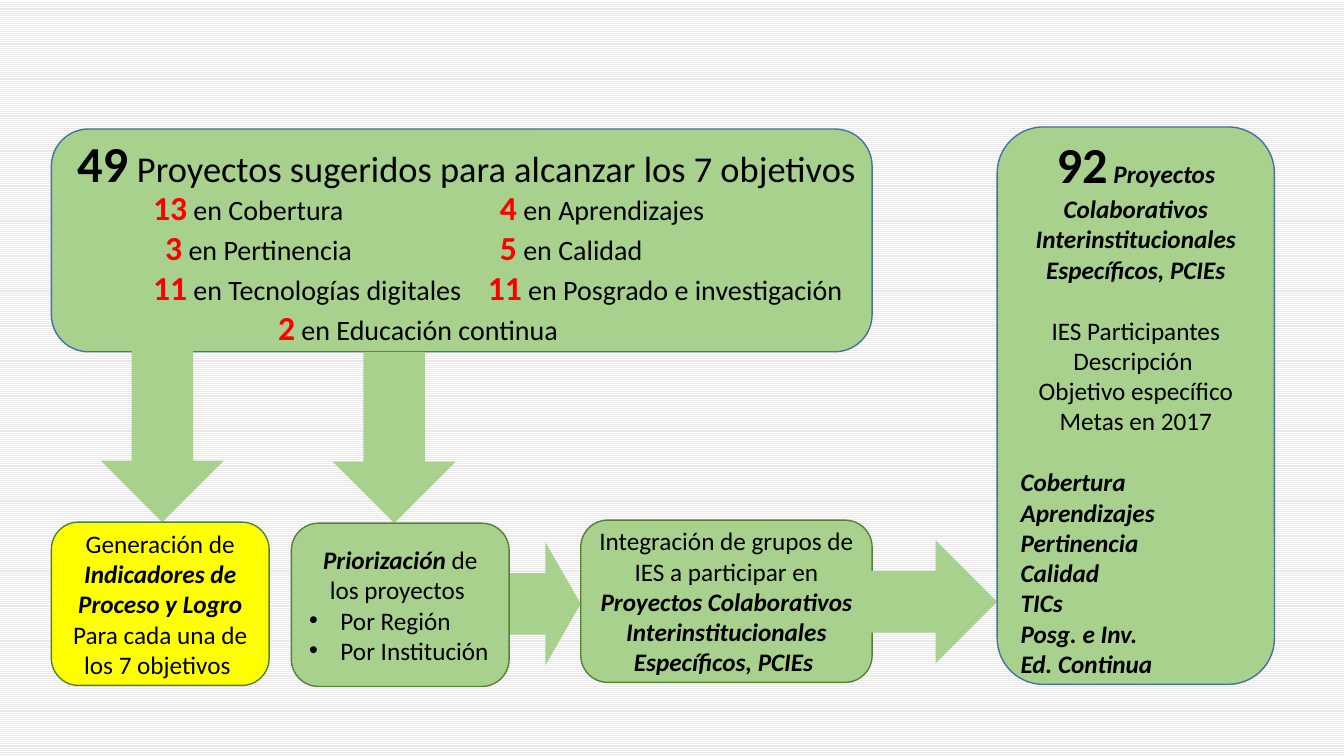
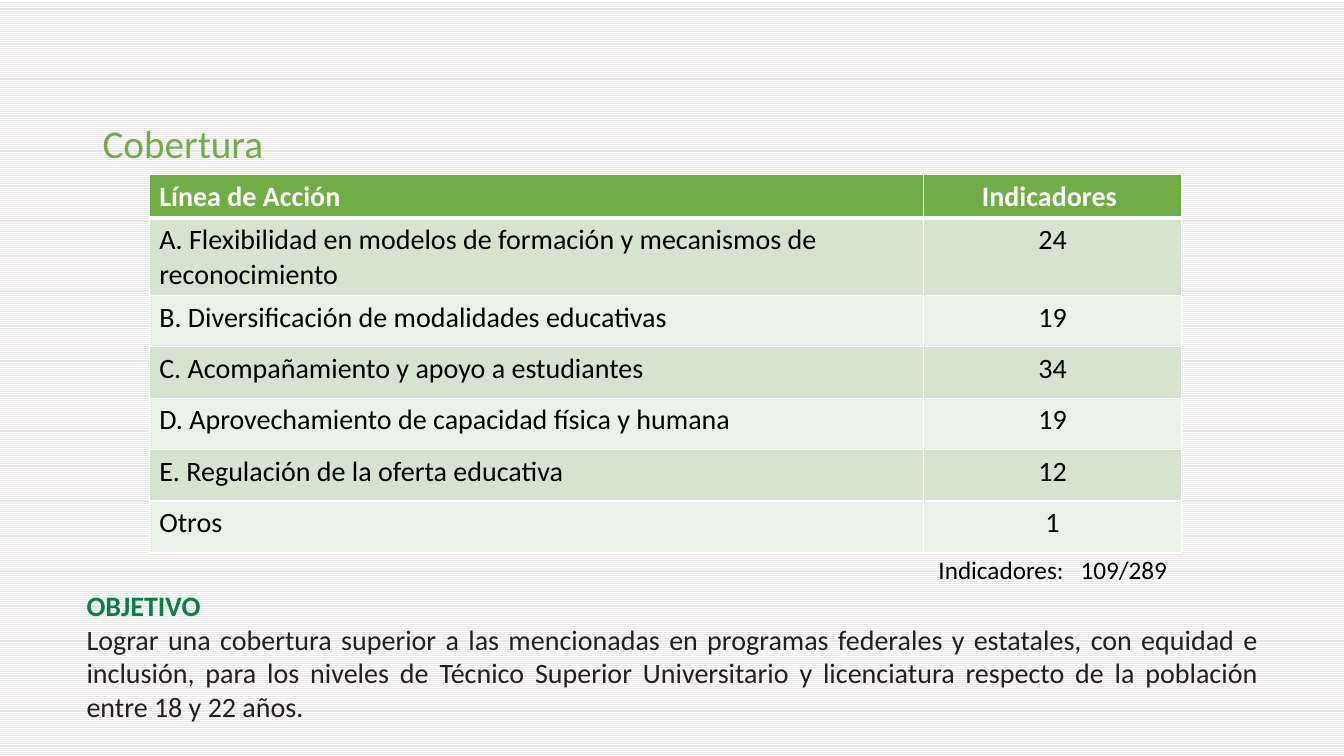
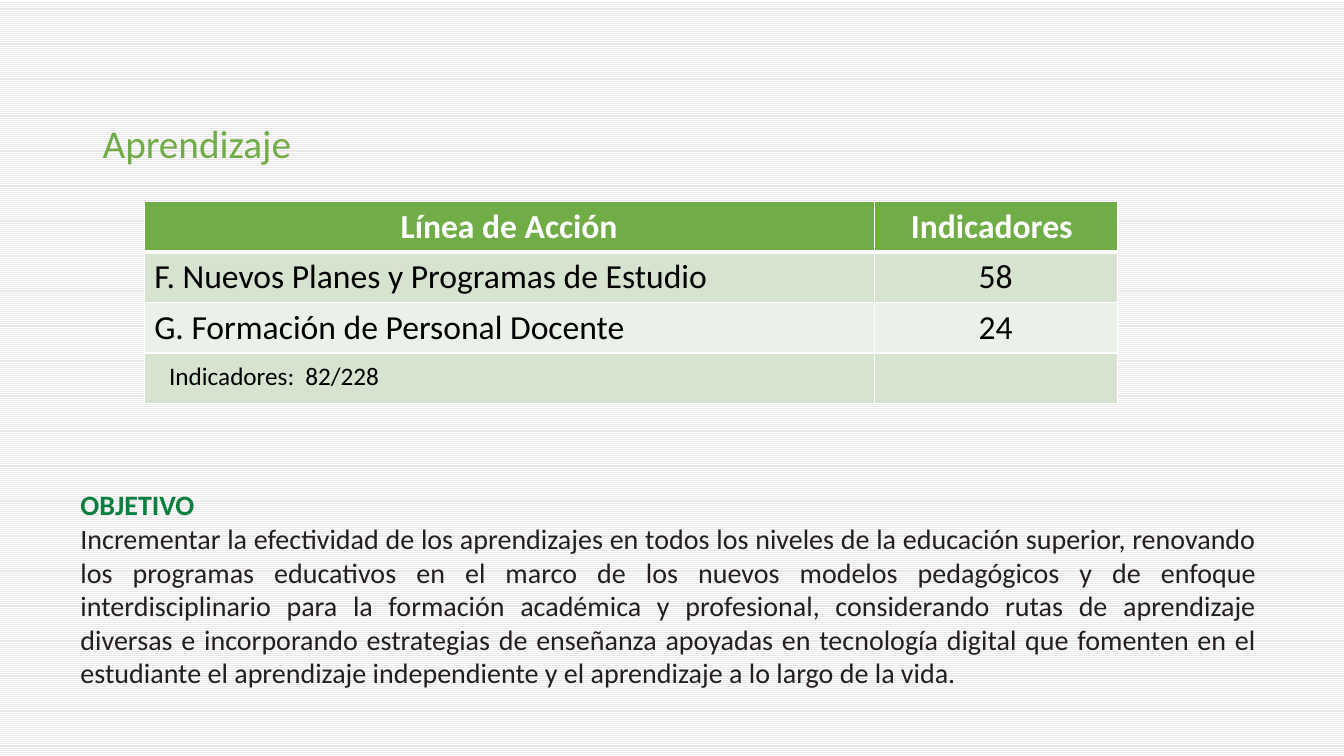
from dataclasses import dataclass

from lxml import etree
from pptx import Presentation
from pptx.dml.color import RGBColor
from pptx.enum.dml import MSO_PATTERN
from pptx.enum.shapes import MSO_SHAPE
from pptx.enum.text import MSO_ANCHOR, PP_ALIGN
from pptx.oxml.ns import qn
from pptx.util import Inches, Pt

LEFT, CENTER, JUSTIFY = PP_ALIGN.LEFT, PP_ALIGN.CENTER, PP_ALIGN.JUSTIFY
TOP, MIDDLE = MSO_ANCHOR.TOP, MSO_ANCHOR.MIDDLE
ROUNDED, DOWN_ARROW, RIGHT_ARROW = (
    MSO_SHAPE.ROUNDED_RECTANGLE, MSO_SHAPE.DOWN_ARROW, MSO_SHAPE.RIGHT_ARROW)
LIGHT_HORIZONTAL = MSO_PATTERN.LIGHT_HORIZONTAL

FONT = "Calibri"
COLORS = {
    "stripe": "E9E7E7", "white": "FFFFFF", "black": "000000", "red": "FF0000",
    "card": "A9D18E", "highlight": "FFFF00", "blue_line": "43739E",
    "green_line": "548235", "accent": "70AD47", "band_dark": "D5E3CF",
    "band_light": "EBF1E9", "heading": "097F40", "body": "231F20",
}


@dataclass
class Run:
    text: str
    size: float = 18
    color: str = "black"
    bold: bool = False
    italic: bool = False


@dataclass
class Line:
    runs: list
    align: PP_ALIGN = LEFT
    before: float = 0
    spacing: float = 1.0
    tabs: tuple = ()
    bullet: bool = False


def rgb(name):
    return RGBColor.from_string(COLORS[name])


def add_bullet(properties):
    properties.set("marL", str(Inches(0.31)))
    properties.set("indent", str(Inches(-0.31)))
    etree.SubElement(properties, qn("a:buFont")).set("typeface", "Arial")
    etree.SubElement(properties, qn("a:buChar")).set("char", "•")


def add_tabs(properties, positions):
    tab_list = etree.SubElement(properties, qn("a:tabLst"))
    for position in positions:
        tab = etree.SubElement(tab_list, qn("a:tab"))
        tab.set("pos", str(Inches(position)))
        tab.set("algn", "l")


def write_text(frame, lines, anchor=TOP):
    frame.word_wrap = True
    frame.vertical_anchor = anchor
    for index, line in enumerate(lines):
        paragraph = frame.add_paragraph() if index else frame.paragraphs[0]
        properties = paragraph._p.get_or_add_pPr()
        if line.bullet:
            add_bullet(properties)
        if line.tabs:
            add_tabs(properties, line.tabs)
        paragraph.alignment = line.align
        paragraph.line_spacing = line.spacing
        if line.before:
            paragraph.space_before = Pt(line.before)
        for part in line.runs:
            run = paragraph.add_run()
            run.text = part.text
            run.font.name = FONT
            run.font.size = Pt(part.size)
            run.font.bold = part.bold
            run.font.italic = part.italic
            run.font.color.rgb = rgb(part.color)


def add_text(slide, box, lines, anchor=TOP):
    shape = slide.shapes.add_textbox(*map(Inches, box))
    write_text(shape.text_frame, lines, anchor)


def add_block(slide, kind, box, fill="card", line=None, lines=()):
    shape = slide.shapes.add_shape(kind, *map(Inches, box))
    shape.shadow.inherit = False
    shape.fill.solid()
    shape.fill.fore_color.rgb = rgb(fill)
    if line:
        shape.line.color.rgb = rgb(line)
        shape.line.width = Pt(1)
    else:
        shape.line.fill.background()
    write_text(shape.text_frame, lines, MIDDLE)


def add_slide(presentation):
    slide = presentation.slides.add_slide(presentation.slide_layouts[6])
    fill = slide.background.fill
    fill.patterned()
    fill.pattern = LIGHT_HORIZONTAL
    fill.fore_color.rgb = rgb("stripe")
    fill.back_color.rgb = rgb("white")
    return slide


def add_projects_card(slide, box):
    left, top, width, height = box
    add_block(slide, ROUNDED, box, line="blue_line")
    add_text(slide, (left, top - 0.02, width + 0.1, 0.71), [Line([
        Run("49", 36, bold=True), Run(" ", 28),
        Run("Proyectos sugeridos para alcanzar los 7 objetivos", 26)], CENTER)])
    rows = [
        [(1.0, "13", "Cobertura"), (4.44, "4", "Aprendizajes")],
        [(1.12, "3", "Pertinencia"), (4.44, "5", "Calidad")],
        [(1.0, "11", "Tecnologías digitales"), (4.32, "11", "Posgrado e investigación")],
        [(2.24, "2", "Educación continua")],
    ]
    lines = []
    for row in rows:
        runs = []
        for _, count, objective in row:
            runs += [Run("\t", 20), Run(count, 24, "red", True), Run(f" en {objective}", 20)]
        lines.append(Line(runs, tabs=[entry[0] for entry in row]))
    add_text(slide, (left - 0.09, top + 0.52, width + 0.1, 2.05), lines)


def add_collaboration_card(slide, box):
    lines = [
        Line([Run("92", 36, bold=True),
              Run(" Proyectos Colaborativos Interinstitucionales Específicos, PCIEs",
                  bold=True, italic=True)], CENTER),
        Line([Run("IES Participantes Descripción ")], CENTER, before=22),
        Line([Run("Objetivo específico")], CENTER),
        Line([Run("Metas en 2017")], CENTER),
    ]
    objectives = ["Cobertura", "Aprendizajes", "Pertinencia", "Calidad", "TICs",
                  "Posg. e Inv.", "Ed. Continua"]
    for index, objective in enumerate(objectives):
        lines.append(Line([Run(objective, bold=True, italic=True)],
                          before=0 if index else 22))
    add_block(slide, ROUNDED, box, line="blue_line", lines=lines)


def add_process(slide, left, top):
    prioritization = [
        Line([Run("Priorización ", bold=True, italic=True), Run("de los proyectos ")], CENTER),
        Line([Run("Por Región")], bullet=True),
        Line([Run("Por Institución")], bullet=True),
    ]
    integration = [Line([
        Run("Integración de grupos de IES a participar en "),
        Run("Proyectos Colaborativos Interinstitucionales Específicos, PCIEs ",
            bold=True, italic=True)], CENTER)]
    indicators = [
        Line([Run("Generación de "),
              Run("Indicadores de Proceso y Logro", bold=True, italic=True)], CENTER),
        Line([Run("Para cada una de los 7 objetivos ")], CENTER),
    ]
    arrows = [
        (RIGHT_ARROW, (4.55, 0.2, 0.7, 1.22)),
        (DOWN_ARROW, (2.79, -1.69, 1.22, 1.7)),
        (DOWN_ARROW, (0.49, -1.81, 1.22, 1.81)),
    ]
    for kind, (x, y, width, height) in arrows:
        add_block(slide, kind, (left + x, top + y, width, height))
    cards = [
        ((2.38, 0.01, 2.16, 1.62), "card", prioritization),
        ((5.25, -0.02, 2.89, 1.61), "card", integration),
        ((0, 0, 2.16, 1.62), "highlight", indicators),
    ]
    for (x, y, width, height), fill, lines in cards:
        add_block(slide, ROUNDED, (left + x, top + y, width, height), fill,
                  "green_line", lines)
    add_block(slide, RIGHT_ARROW, (left + 8.05, top + 0.18, 1.33, 1.22))


def set_borders(cell, **widths):
    properties = cell._tc.get_or_add_tcPr()
    for side in "LRTB":
        line = etree.SubElement(properties, qn(f"a:ln{side}"))
        line.set("w", str(Pt(widths.get(side, 1))))
        fill = etree.SubElement(line, qn("a:solidFill"))
        etree.SubElement(fill, qn("a:srgbClr")).set("val", COLORS["white"])


def add_indicator_table(slide, box, columns, heights, rows, size, header_align):
    table = slide.shapes.add_table(len(heights), len(columns), *map(Inches, box)).table
    for column, width in zip(table.columns, columns):
        column.width = Inches(width)
    for row, height in zip(table.rows, heights):
        row.height = Inches(height)
    header = ("Línea de Acción", "Indicadores ")
    for row_index, values in enumerate([header, *rows]):
        is_header = row_index == 0
        band = "accent" if is_header else "band_dark" if row_index % 2 else "band_light"
        for column_index, value in enumerate(values):
            cell = table.cell(row_index, column_index)
            set_borders(cell, B=3 if is_header else 1, T=3 if row_index == 1 else 1)
            cell.fill.solid()
            cell.fill.fore_color.rgb = rgb(band)
            if value:
                align = CENTER if column_index else header_align if is_header else LEFT
                color = "white" if is_header else "black"
                write_text(cell.text_frame, [Line([Run(value, size, color, is_header)], align)])


def add_title(slide, title):
    add_text(slide, (0.92, 1.05, 11.5, 0.8),
             [Line([Run(title, 28, "accent")], spacing=0.9)], MIDDLE)


def add_objective(slide, box, objective):
    add_text(slide, box, [
        Line([Run("OBJETIVO", 20, "heading", True)]),
        Line([Run(objective, 20, "body")], JUSTIFY)], MIDDLE)


def add_total(slide, box, total, tab):
    add_text(slide, box, [Line([Run("Indicadores:\t"), Run(total)], tabs=(tab,))])


def build_overview(presentation):
    slide = add_slide(presentation)
    add_projects_card(slide, (0.51, 1.28, 8.14, 2.21))
    add_process(slide, 0.51, 5.18)
    add_collaboration_card(slide, (9.89, 1.26, 2.75, 5.53))


def build_coverage(presentation):
    slide = add_slide(presentation)
    add_title(slide, "Cobertura")
    rows = [
        ("A. Flexibilidad en modelos de formación y mecanismos de reconocimiento", "24"),
        ("B. Diversificación de modalidades educativas", "19"),
        ("C. Acompañamiento y apoyo a estudiantes", "34"),
        ("D. Aprovechamiento de capacidad física y humana", "19"),
        ("E. Regulación de la oferta educativa", "12"),
        ("Otros", "1"),
    ]
    add_indicator_table(slide, (1.48, 1.73, 10.24, 3.77), (7.68, 2.56),
                        [0.41, 0.72] + [0.51] * 5, rows, 20, LEFT)
    add_objective(slide, (0.76, 5.78, 11.82, 1.45), (
        "Lograr una cobertura superior a las mencionadas en programas federales y "
        "estatales, con equidad e inclusión, para los niveles de Técnico Superior "
        "Universitario y licenciatura respecto de la población entre 18 y 22 años."))
    add_total(slide, (9.21, 5.45, 2.47, 0.4), "109/289", 1.41)


def build_learning(presentation):
    slide = add_slide(presentation)
    add_title(slide, "Aprendizaje")
    rows = [
        ("F. Nuevos Planes y Programas de Estudio", "58"),
        ("G. Formación de Personal Docente", "24"),
        ("", ""),
    ]
    add_indicator_table(slide, (1.43, 2, 9.65, 2.01), (7.24, 2.41),
                        [0.5] * 4, rows, 24, CENTER)
    add_objective(slide, (0.7, 4.78, 11.86, 2.12), (
        "Incrementar la efectividad de los aprendizajes en todos los niveles de la "
        "educación superior, renovando los programas educativos en el marco de los "
        "nuevos modelos pedagógicos y de enfoque interdisciplinario para la formación "
        "académica y profesional, considerando rutas de aprendizaje diversas e "
        "incorporando estrategias de enseñanza apoyadas en tecnología digital que "
        "fomenten en el estudiante el aprendizaje independiente y el aprendizaje a lo "
        "largo de la vida."))
    add_total(slide, (1.58, 3.53, 2.54, 0.41), "82/228", 1.35)


def main():
    presentation = Presentation()
    presentation.slide_width = Inches(13.33)
    presentation.slide_height = Inches(7.5)
    build_overview(presentation)
    build_coverage(presentation)
    build_learning(presentation)
    presentation.save("out.pptx")


if __name__ == "__main__":
    main()
